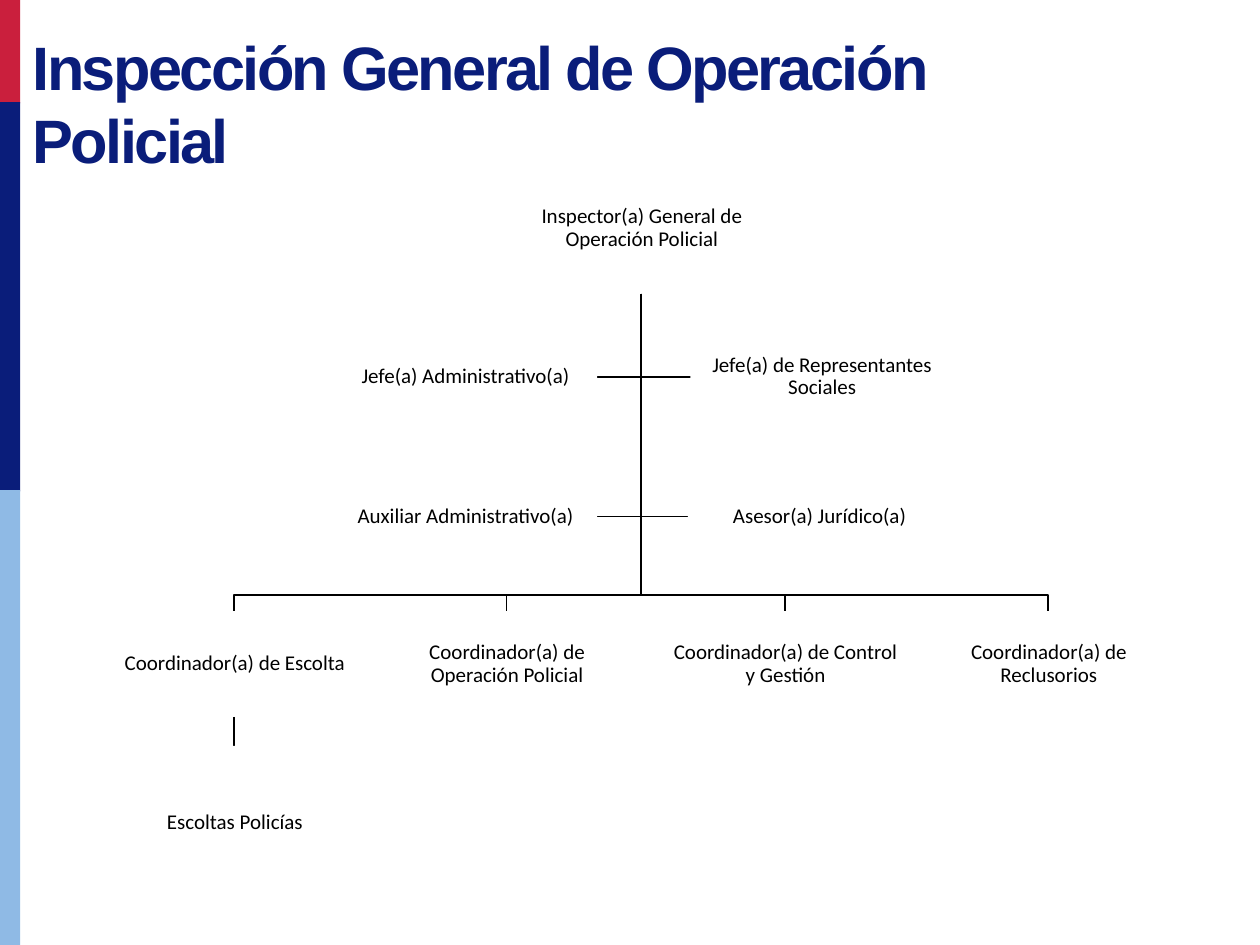
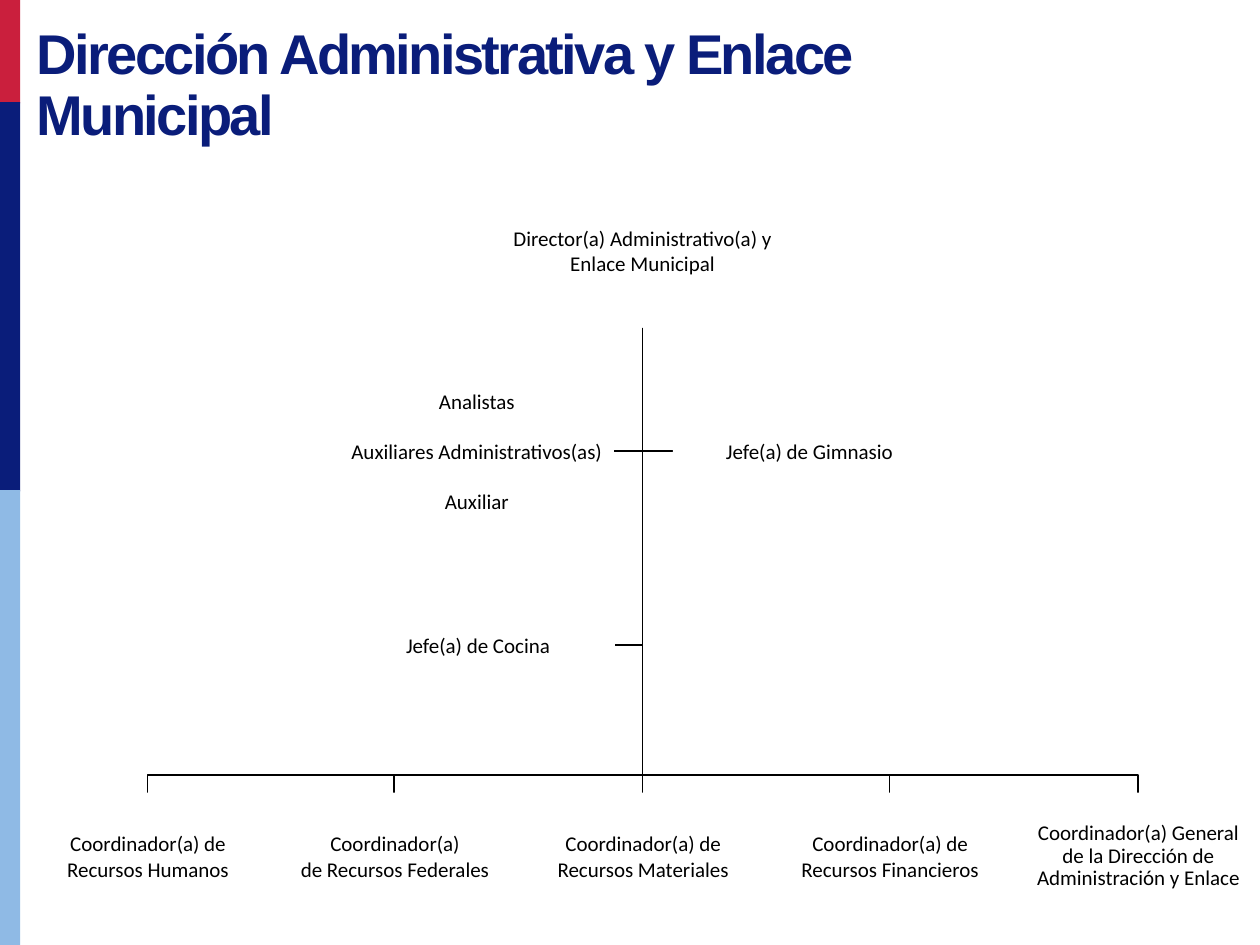
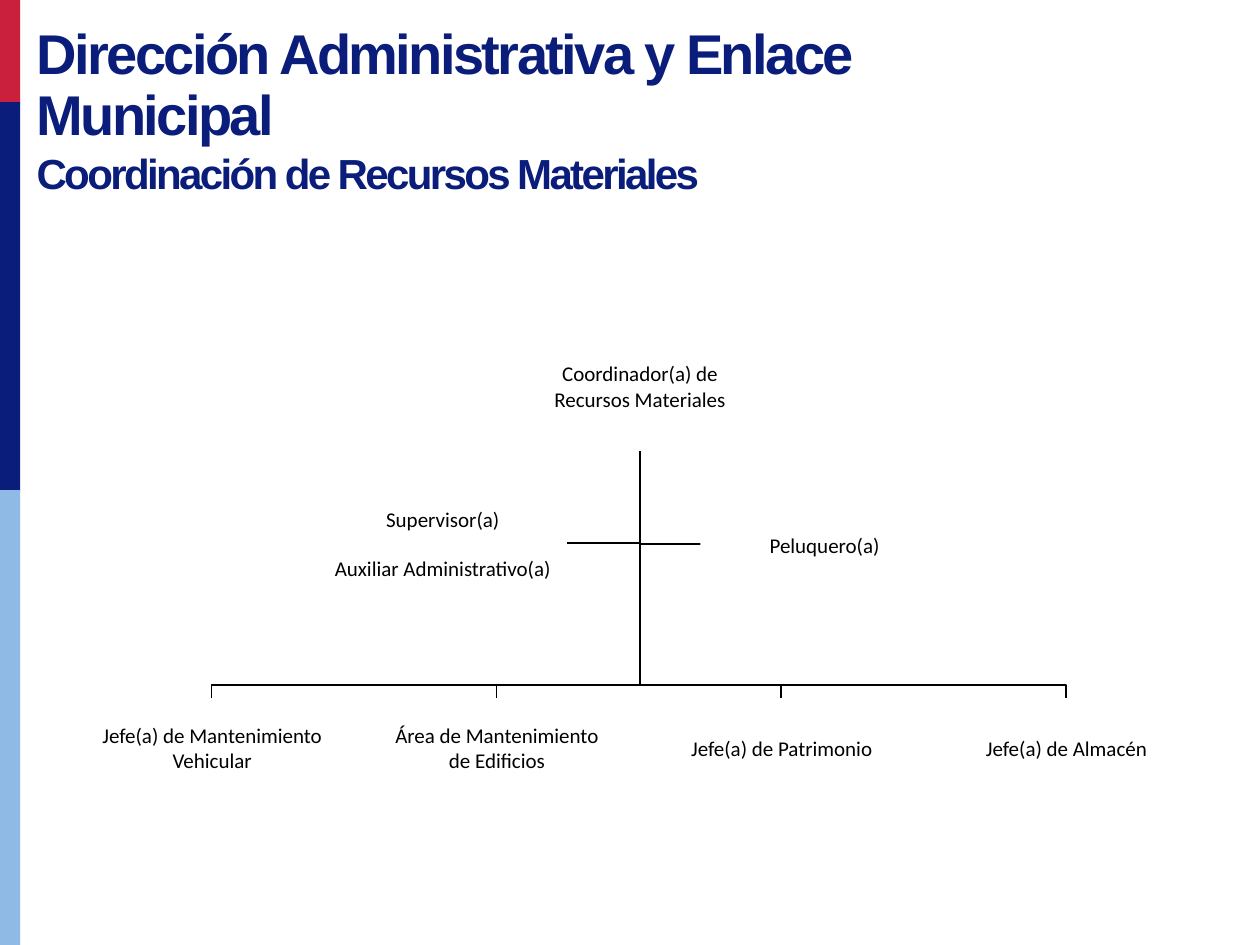
from pptx import Presentation
from pptx.dml.color import RGBColor
from pptx.enum.shapes import MSO_CONNECTOR as LINK, MSO_SHAPE as PRESET
from pptx.enum.text import MSO_ANCHOR as ANCHOR, MSO_AUTO_SIZE as FIT, PP_ALIGN as ALIGN
from pptx.oxml.ns import qn
from pptx.util import Pt
from lxml.etree import SubElement

PX = 9144
RED = RGBColor(0xCA, 0x1F, 0x3D)
NAVY = RGBColor(0x0A, 0x1D, 0x7A)
SKY = RGBColor(0x8F, 0xBA, 0xE5)
BLACK = RGBColor(0, 0, 0)
WHITE = RGBColor(255, 255, 255)
TITLE_FONT = "Arial"
POST_FONT = "Calibri"
DIRECTION = "Dirección Administrativa y Enlace Municipal"

CHARTS = [
    {
        "title": [("Inspección General de Operación Policial", 35, 1.0)],
        "title_box": (16, 18, 746, 128),
        "spacing": 0.9,
        "head": ("Inspector(a) General de\vOperación Policial", 403, 129, 213, 104),
        "staff_size": (209, 84),
        "staff": [
            ("Jefe(a) Administrativo(a)", 265, 257),
            ("Jefe(a) de Representantes Sociales", 548, 257),
            ("Auxiliar Administrativo(a)", 265, 368),
            ("Asesor(a) Jurídico(a)", 546, 368),
        ],
        "bus": 472,
        "area_row": (485, 187, 84),
        "area_lefts": [93, 309, 530, 739],
        "areas": [
            ("Coordinador(a) de Escolta", 0.9),
            ("Coordinador(a) de Operación Policial", 0.9),
            ("Coordinador(a) de Control y Gestión", 0.9),
            ("Coordinador(a) de Reclusorios", 0.9),
        ],
        "escort": ("Escoltas Policías", 93, 592, 187, 122),
    },
    {
        "title": [(DIRECTION, 32, 0.9)],
        "title_box": (19, 16, 746, 107),
        "spacing": 1.0,
        "head": ("Director(a) Administrativo(a) y Enlace Municipal", 386, 138, 248, 122),
        "staff_size": (217, 122),
        "staff": [
            ("Analistas\nAuxiliares Administrativos(as)\nAuxiliar", 270, 297),
            ("Jefe(a) de Gimnasio", 534, 297),
            ("Jefe(a) de Cocina", 271, 451),
        ],
        "bus": 615,
        "area_row": (629, 169, 101),
        "area_lefts": [33 + 393 * i // 2 for i in range(5)],
        "areas": [
            ("Coordinador(a) de Recursos Humanos", 1.0),
            ("Coordinador(a)\nde Recursos Federales", 1.0),
            ("Coordinador(a) de\nRecursos Materiales", 1.0),
            ("Coordinador(a) de\nRecursos Financieros", 1.0),
            ("Coordinador(a) General de la Dirección de Administración y Enlace", 0.9),
        ],
    },
    {
        "title": [(DIRECTION, 32, 0.9), ("Coordinación de Recursos Materiales", 24, 1.0)],
        "title_box": (19, 16, 746, 147),
        "spacing": 1.0,
        "head": ("Coordinador(a) de\nRecursos Materiales", 396, 255, 224, 103),
        "staff_size": (197, 83),
        "staff": [
            ("Supervisor(a)\nAuxiliar Administrativo(a)", 253, 390),
            ("Peluquero(a)", 556, 391),
        ],
        "bus": 544,
        "area_row": (554, 207, 79),
        "area_lefts": range(65, 744, 226),
        "areas": [
            ("Jefe(a) de Mantenimiento\nVehicular", 1.0),
            ("Área de Mantenimiento\nde Edificios", 1.0),
            ("Jefe(a) de Patrimonio", 1.0),
            ("Jefe(a) de Almacén", 1.0),
        ],
    },
]


def add_post(slide, text, left, top, width, height, spacing, gap=0):
    post = slide.shapes.add_shape(
        PRESET.RECTANGLE, left * PX, top * PX, width * PX, height * PX)
    post.shadow.inherit = False
    post.fill.solid()
    post.fill.fore_color.rgb = WHITE
    post.line.fill.background()
    frame = post.text_frame
    frame.margin_left = frame.margin_right = frame.margin_top = frame.margin_bottom = PX
    frame.vertical_anchor = ANCHOR.MIDDLE
    frame.word_wrap = True
    frame.text = text
    for index, paragraph in enumerate(frame.paragraphs):
        paragraph.alignment = ALIGN.CENTER
        paragraph.line_spacing = spacing
        paragraph.space_before = Pt(gap if index else 0)
        paragraph.font.name = POST_FONT
        paragraph.font.size = Pt(12)
        paragraph.font.color.rgb = BLACK


def add_branch(slide, points):
    start, end = points[0], points[-1]
    if start[0] == end[0]:
        branch = slide.shapes.add_connector(
            LINK.STRAIGHT, start[0] * PX, start[1] * PX, end[0] * PX, end[1] * PX)
        SubElement(branch.element.spPr, qn("a:effectLst"))
    else:
        outline = slide.shapes.build_freeform(*start, scale=PX)
        outline.add_line_segments(points[1:], close=False)
        branch = outline.convert_to_shape()
        branch.shadow.inherit = False
        branch.fill.background()
    branch.line.color.rgb = BLACK
    branch.line.width = Pt(1)


prs = Presentation()
prs.slide_width = 1000 * PX
prs.slide_height = 750 * PX
master = prs.slide_master.element

title_style = master.find(".//" + qn("p:titleStyle") + "/" + qn("a:lvl1pPr"))
title_style.set("algn", "l")
title_style.find(qn("a:defRPr")).set("spc", "-150")

slides = [prs.slides.add_slide(prs.slide_layouts[5]) for chart in CHARTS]

for number, (top, height, color) in enumerate([(0, 82, RED), (81, 309, NAVY), (389, 361, SKY)]):
    band = slides[0].shapes.add_shape(PRESET.RECTANGLE, 0, top * PX, 16 * PX, height * PX)
    band.shadow.inherit = False
    band.fill.solid()
    band.fill.fore_color.rgb = color
    band.line.fill.background()
    band.element.nvSpPr.cNvPr.set("id", str(20 + number))
    master.cSld.spTree.append(band.element)

for slide, chart in zip(slides, CHARTS):
    title = slide.shapes.title
    title.left, title.top, title.width, title.height = [n * PX for n in chart["title_box"]]
    heading = title.text_frame
    heading.text = "\n".join(text for text, size, spacing in chart["title"])
    heading.word_wrap = True
    heading.auto_size = FIT.NONE
    heading.vertical_anchor = ANCHOR.TOP
    for paragraph, (text, size, spacing) in zip(heading.paragraphs, chart["title"]):
        paragraph.line_spacing = spacing
        paragraph.font.name = TITLE_FONT
        paragraph.font.size = Pt(size)
        paragraph.font.bold = True
        paragraph.font.color.rgb = NAVY

    head_text, head_left, head_top, head_width, head_height = chart["head"]
    trunk = head_left + head_width // 2
    root = (trunk, head_top + head_height)
    staff_width, staff_height = chart["staff_size"]
    area_top, area_width, area_height = chart["area_row"]

    for text, left, top in chart["staff"]:
        middle = top + staff_height // 2
        edge = left if left > trunk else left + staff_width
        add_branch(slide, [root, (trunk, middle), (edge, middle)])
    for left in chart["area_lefts"]:
        center = left + area_width // 2
        add_branch(slide, [root, (trunk, chart["bus"]), (center, chart["bus"]), (center, area_top)])

    add_post(slide, *chart["head"], chart["spacing"])
    for text, left, top in chart["staff"]:
        add_post(slide, text, left, top, staff_width, staff_height, chart["spacing"], gap=14)
    for left, (text, spacing) in zip(chart["area_lefts"], chart["areas"]):
        add_post(slide, text, left, area_top, area_width, area_height, spacing)

    if "escort" in chart:
        text, left, top, width, height = chart["escort"]
        center = left + width // 2
        add_branch(slide, [(center, area_top + area_height), (center, top)])
        add_post(slide, *chart["escort"], chart["spacing"])

prs.save("out.pptx")
